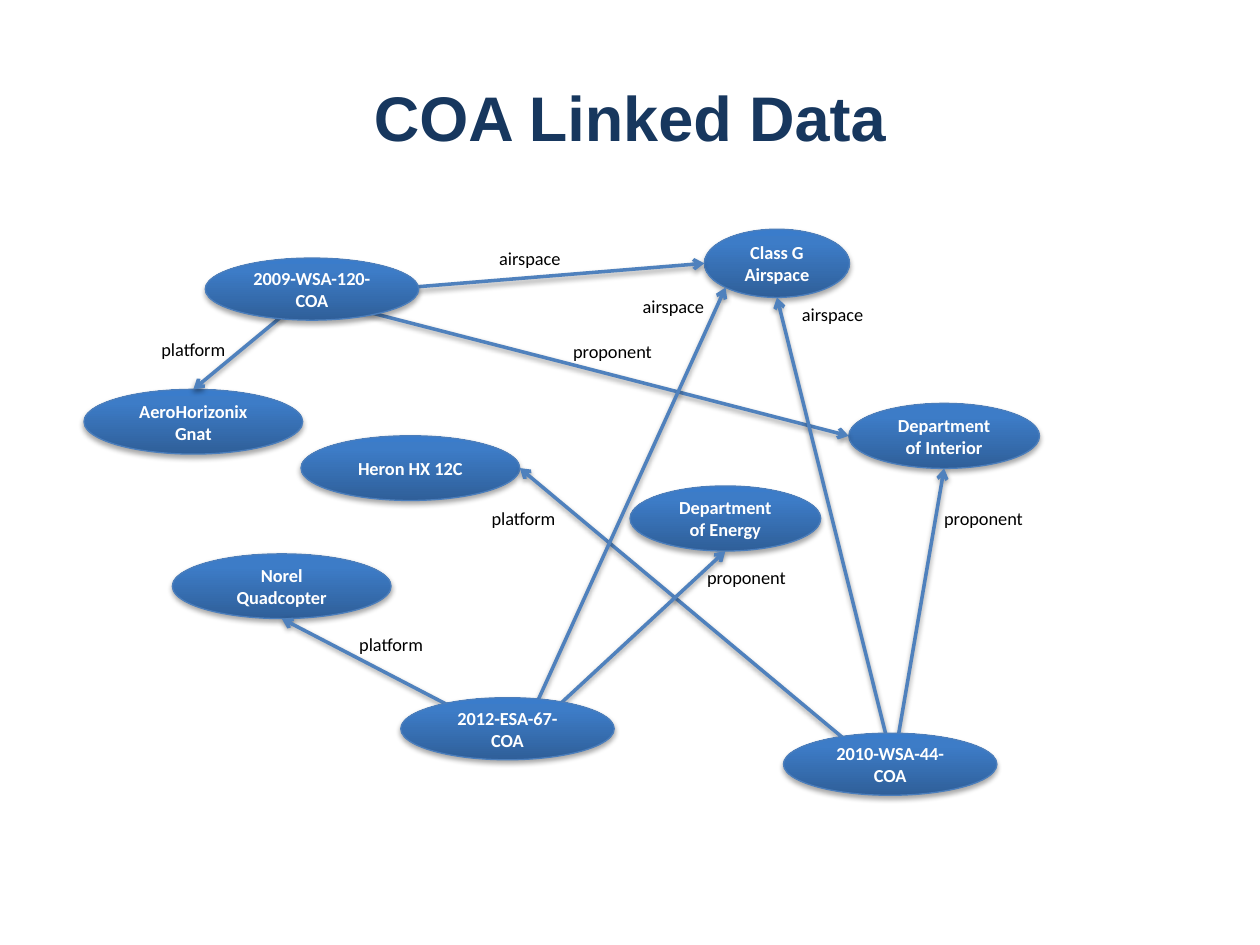
import copy
import pptx
import pptx.util
import pptx.dml.color
import pptx.enum.shapes
import pptx.enum.text
import pptx.oxml
import pptx.oxml.ns

Pt = pptx.util.Pt
qn = pptx.oxml.ns.qn
NS = pptx.oxml.ns.nsdecls("a")

STOPS = [(0, "2F5F99"), (0.8, "3D7CC7"), (1, "3A7CCB")]
# Fractions of a node's width and height; DIAG is a 45 degree site
DIAG = 0.146
SITES = {"top": (0.5, 0), "left": (0, 0.5), "bottom": (0.5, 1),
         "right": (1, 0.5), "low left": (DIAG, 1 - DIAG)}

# Nodes: text and box (left, top, width, height)
GOALS = {
    "air": ("Class G Airspace", (402.5, 131, 83, 39)),
    "inner": ("Department of Interior", (485, 230.5, 109, 37.2)),
    "power": ("Department of Energy", (360, 277.7, 109, 37.2)),
    "wasp": ("AeroHorizonix Gnat", (48, 222.5, 125, 37)),
    "raven": ("Heron HX 12C", (172, 249, 125, 37)),
    "quad": ("Norel Quadcopter", (98.5, 316.5, 125, 37)),
}
COAS = [
    ("2009-WSA-120-COA", (117.3, 147.5, 122, 35.5)),
    ("2012-ESA-67-COA", (229, 398.7, 122, 35.5)),
    ("2010-WSA-44-COA", (447.7, 419, 122, 35.5)),
]

# Links: start point, goal node, site on the goal
LINKS = [
    ((175, 169.2), "inner", "left"),
    ((173, 169.2), "air", "left"),
    ((175, 169.2), "wasp", "top"),
    ((510.5, 437), "inner", "bottom"),
    ((510.5, 437), "air", "bottom"),
    ((510.5, 445.7), "raven", "right"),
    ((296.6, 424), "quad", "bottom"),
    ((296.6, 424), "power", "bottom"),
    ((296.6, 424), "air", "low left"),
]

# Labels: width, then the left and top of each place
LABELS = {
    "airspace": (65.5, [(270, 138), (352, 165), (443, 169.5)]),
    "proponent": (68, [(316, 191), (528, 286.5), (392.5, 320)]),
    "platform": (67, [(77, 189.5), (190, 358.5), (265.7, 286.5)]),
}


def tint(code):
    return pptx.dml.color.RGBColor.from_string(code)


def write(frame, text, size=10.5, font="Calibri", color="000000", bold=False,
          anchor=pptx.enum.text.MSO_ANCHOR.MIDDLE):
    frame.word_wrap = True
    frame.vertical_anchor = anchor
    para = frame.paragraphs[0]
    para.alignment = pptx.enum.text.PP_ALIGN.CENTER
    run = para.add_run()
    run.text = text
    run.font.size = Pt(size)
    run.font.name = font
    run.font.bold = bold
    run.font.color.rgb = tint(color)


def shade(props, dist, alpha):
    """Give a shape or connector a soft shadow straight below it."""
    for old in props.findall(qn("a:effectLst")):
        props.remove(old)
    props.append(pptx.oxml.parse_xml(
        f'<a:effectLst {NS}><a:outerShdw blurRad="{Pt(3.1)}" '
        f'dist="{Pt(dist)}" dir="5400000" rotWithShape="0">'
        f'<a:srgbClr val="000000"><a:alpha val="{alpha}000"/></a:srgbClr>'
        '</a:outerShdw></a:effectLst>'))


def blend(fill, props):
    """Fill with the three stops, running upward."""
    fill.gradient()
    fill.gradient_angle = 90
    stops = props.find(qn("a:gradFill")).find(qn("a:gsLst"))
    stops.append(copy.deepcopy(stops[-1]))
    for stop, (place, color) in zip(fill.gradient_stops, STOPS):
        stop.position = place
        stop.color.rgb = tint(color)


def node(slide, text, box):
    oval = slide.shapes.add_shape(
        pptx.enum.shapes.MSO_SHAPE.OVAL, *map(Pt, box))
    props = oval._element.spPr
    blend(oval.fill, props)
    oval.line.color.rgb = tint("4B7EBC")
    oval.line.width = Pt(0.75)
    shade(props, 1.8, 35)
    write(oval.text_frame, text, color="FFFFFF", bold=True)


def link(slide, start, goal, site):
    left, top, width, height = GOALS[goal][1]
    across, down = SITES[site]
    end = (left + width * across, top + height * down)
    line = slide.shapes.add_connector(
        pptx.enum.shapes.MSO_CONNECTOR.STRAIGHT, *map(Pt, start + end))
    line.line.color.rgb = tint("4F81BD")
    line.line.width = Pt(2)
    props = line._element.spPr
    props.find(qn("a:ln")).append(
        pptx.oxml.parse_xml(f'<a:tailEnd {NS} type="arrow"/>'))
    shade(props, 1.6, 38)


def label(slide, text, left, top, width):
    box = slide.shapes.add_textbox(Pt(left), Pt(top), Pt(width), Pt(20))
    write(box.text_frame, text, anchor=pptx.enum.text.MSO_ANCHOR.TOP)


def main():
    deck = pptx.Presentation()
    deck.slide_width, deck.slide_height = Pt(720), Pt(540)
    slide = deck.slides.add_slide(deck.slide_layouts[5])

    # Title
    title = slide.shapes.title
    title.left, title.top = Pt(36), Pt(21.6)
    title.width, title.height = Pt(648), Pt(90)
    write(title.text_frame, "COA Linked Data", size=36, font="Arial",
          color="17375E", bold=True)

    # Goals lie under the links, sources over them
    for text, box in GOALS.values():
        node(slide, text, box)
    for start, goal, site in LINKS:
        link(slide, start, goal, site)
    for text, box in COAS:
        node(slide, text, box)

    # Link labels
    for text, (width, spots) in LABELS.items():
        for left, top in spots:
            label(slide, text, left, top, width)

    deck.save("out.pptx")


if __name__ == "__main__":
    main()
